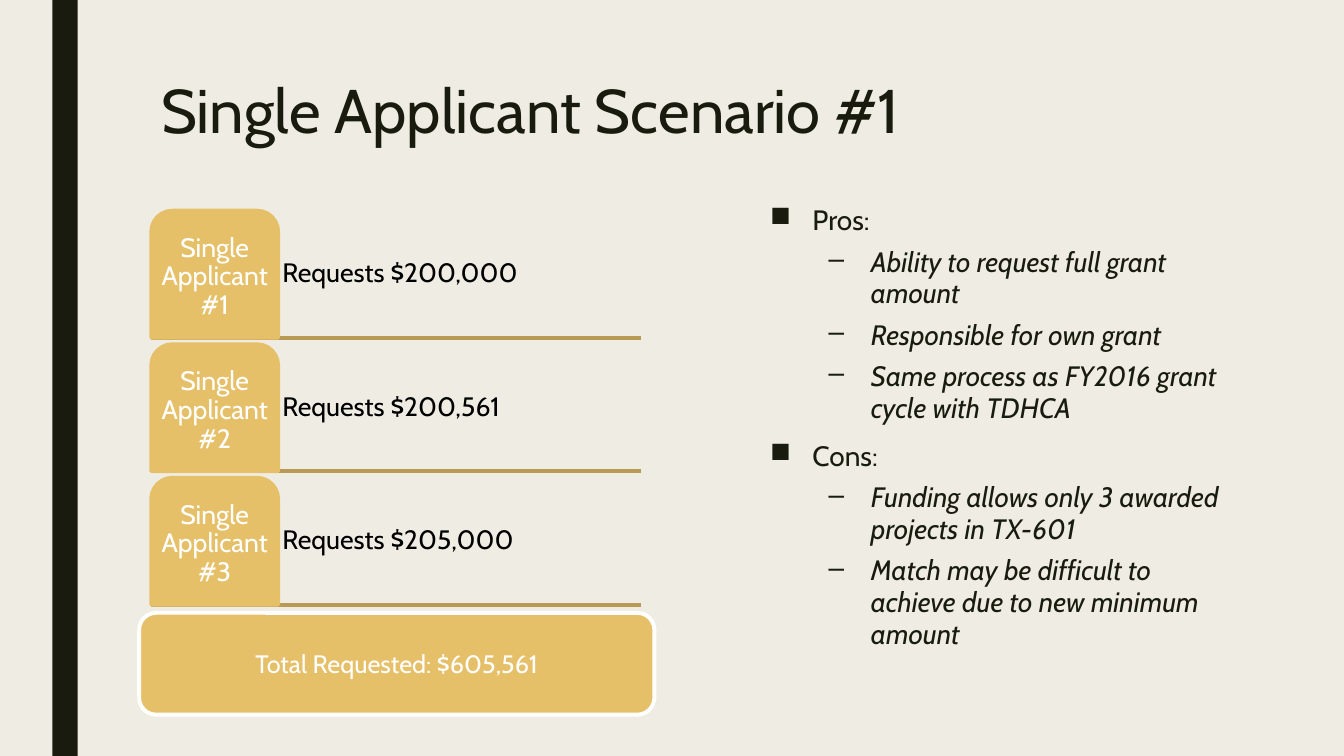
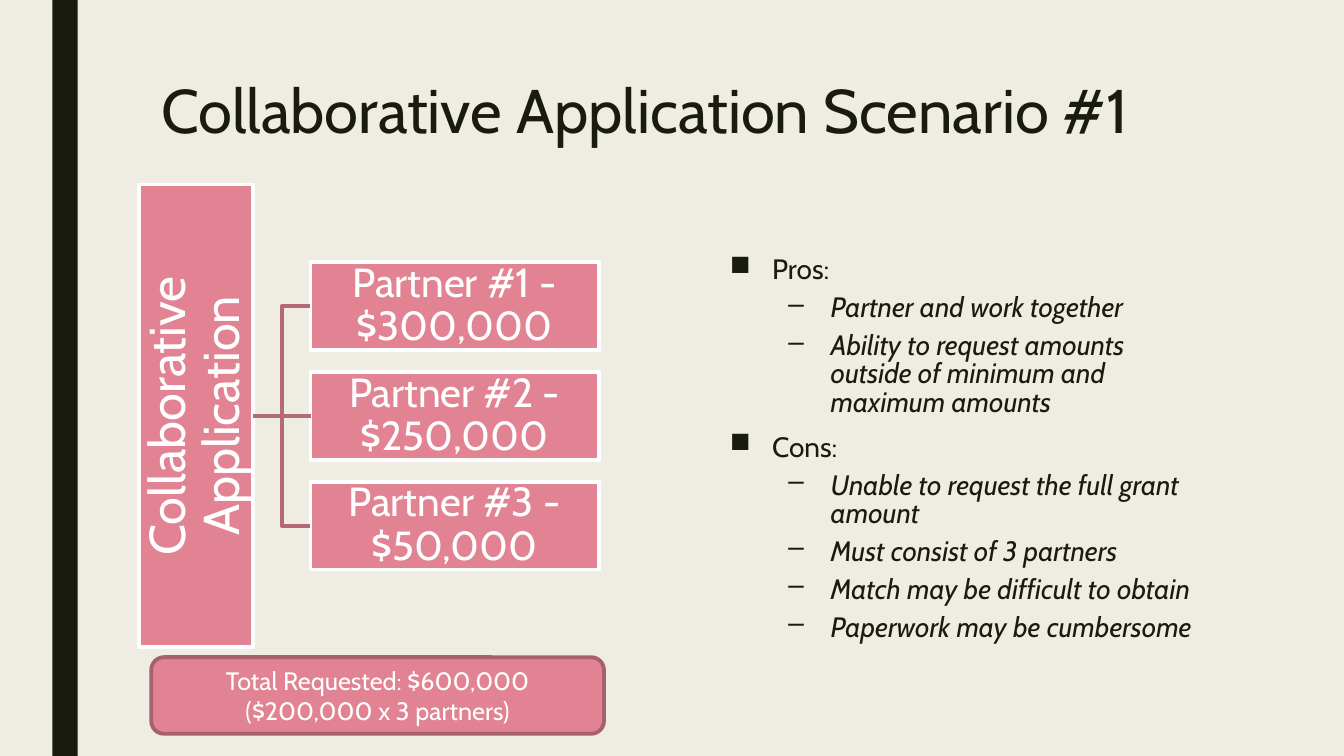
import lxml.etree
import pptx
import pptx.dml.color
import pptx.enum.shapes
import pptx.enum.text
import pptx.oxml.ns
import pptx.util

Inches = pptx.util.Inches
Pt = pptx.util.Pt
SHAPE = pptx.enum.shapes.MSO_SHAPE
CONNECTOR = pptx.enum.shapes.MSO_CONNECTOR
ANCHOR = pptx.enum.text.MSO_ANCHOR
ALIGN = pptx.enum.text.PP_ALIGN
qn = pptx.oxml.ns.qn

THEME = {
    "font": "Cabin",
    "colors": {
        name: pptx.dml.color.RGBColor.from_string(code)
        for name, code in {
            "paper": "EFEDE3", "ink": "191B0E", "white": "FFFFFF", "black": "000000",
            "gold": "E6C069", "gold_line": "B89A54",
            "rose": "E28394", "rose_line": "B56977", "rose_edge": "A7616D",
        }.items()
    },
    "sizes": {"title": Pt(44), "root": Pt(36), "partner": Pt(29), "body": Pt(20),
              "label": Pt(19), "total": Pt(18)},
    "line": Pt(2.75),
}
COLORS = THEME["colors"]


def add_box(page, at, lines=(), shape=None, fill=None, edge=None, size="body", color="white",
            inset=None, anchor=ANCHOR.MIDDLE, align=ALIGN.CENTER, spacing=0.9):
    """Add a preset shape, or a text box if no shape is given, with its text."""
    place = [Inches(value) for value in at]
    if shape is None:
        box = page.shapes.add_textbox(*place)
    else:
        box = page.shapes.add_shape(shape, *place)
        box.shadow.inherit = False
        box.fill.solid()
        box.fill.fore_color.rgb = COLORS[fill]
        if edge:
            box.line.color.rgb = COLORS[edge]
            box.line.width = THEME["line"]
        else:
            box.line.fill.background()
    frame = box.text_frame
    frame.word_wrap = True
    frame.vertical_anchor = anchor
    if inset is not None:
        for side in ("left", "top", "right", "bottom"):
            setattr(frame, "margin_" + side, Inches(inset))
    for index, line in enumerate(lines):
        para = frame.paragraphs[0] if index == 0 else frame.add_paragraph()
        para.alignment = align
        para.line_spacing = spacing
        span = para.add_run()
        span.text = line
        font_format = {"name": THEME["font"], "size": THEME["sizes"][size]}
        for name, value in font_format.items():
            setattr(span.font, name, value)
        span.font.color.rgb = COLORS[color]
    return box


def add_line(page, color, start=(0, 0), end=(0, 0), kind=CONNECTOR.STRAIGHT):
    """Add a connector without a shadow."""
    line = page.shapes.add_connector(kind, *[Inches(value) for value in (*start, *end)])
    line.line.color.rgb = COLORS[color]
    line.line.width = THEME["line"]
    lxml.etree.SubElement(line._element.spPr, qn("a:effectLst"))
    return line


deck = pptx.Presentation()
deck.slide_width, deck.slide_height = Inches(13.33), Inches(7.5)
deck.slide_master.background.fill.solid()
deck.slide_master.background.fill.fore_color.rgb = COLORS["paper"]

# Parts both slides share: side band, title, pros and cons
SLIDES = [
    {
        "title": "Single Applicant Scenario #1",
        "body_at": (7.54, 1.99, 4.86, 5.1),
        "spacing": 0.94,
        "points": {
            "Pros:": ["Ability to request full grant amount",
                      "Responsible for own grant",
                      "Same process as FY2016 grant cycle with TDHCA"],
            "Cons:": ["Funding allows only 3 awarded projects in TX-601",
                      "Match may be difficult to achieve due to new minimum amount"],
        },
    },
    {
        "title": "Collaborative Application Scenario #1",
        "body_at": (7.14, 2.5, 4.86, 4.78),
        "spacing": 0.84,
        "points": {
            "Pros:": ["Partner and work together",
                      "Ability to request amounts outside of minimum and maximum amounts"],
            "Cons:": ["Unable to request the full grant amount",
                      "Must consist of 3 partners",
                      "Match may be difficult to obtain",
                      "Paperwork may be cumbersome"],
        },
    },
]
LEVELS = {
    "heading": {"indent": 0.42, "before": Pt(10), "bullet": "■", "italic": False},
    "point": {"indent": 1, "before": Pt(5), "bullet": "–", "italic": True},
}

pages = []
for content in SLIDES:
    page = deck.slides.add_slide(deck.slide_layouts[6])
    pages.append(page)
    add_box(page, (0.52, 0, 0.25, 7.5), shape=SHAPE.RECTANGLE, fill="ink")
    add_box(page, (1.5, 0.75, 10.5, 0.85), [content["title"]], size="title", color="ink",
            anchor=ANCHOR.TOP, align=ALIGN.LEFT, spacing=0.89)
    lines = [line for heading, points in content["points"].items() for line in (heading, *points)]
    body = add_box(page, content["body_at"], lines, color="ink", anchor=ANCHOR.TOP,
                   align=ALIGN.LEFT, spacing=content["spacing"])
    for para in body.text_frame.paragraphs:
        is_heading = para.text in content["points"]
        level = LEVELS["heading" if is_heading else "point"]
        para.level = 0 if is_heading else 1
        para.space_before, para.space_after = level["before"], Pt(2)
        para.runs[0].font.italic = level["italic"]
        properties = para._p.get_or_add_pPr()
        properties.set("marL", str(Inches(level["indent"])))
        properties.set("indent", str(Inches(-0.42)))
        lxml.etree.SubElement(properties, qn("a:buChar")).set("char", level["bullet"])

single_page, collaborative_page = pages

# Slide 1: one row for each applicant, then the total
TAB = 1.26
for row, amount in enumerate(["$200,000", "$200,561", "$205,000"]):
    top = 2.09 + row * 1.325
    add_line(single_page, "gold_line", (1.5, top + TAB), (6.36, top + TAB))
    add_box(single_page, (1.5, top, TAB, TAB), [f"Single Applicant #{row + 1}"],
            SHAPE.ROUND_2_SAME_RECTANGLE, "gold", "gold", size="label", inset=0.04)
    add_box(single_page, (1.5 + TAB, top, 3.6, TAB), [f"Requests {amount}"],
            size="label", color="black", inset=0.04, align=ALIGN.LEFT)
add_box(single_page, (1.38, 6.08, 5.11, 1.01), ["Total Requested: $605,561"],
        SHAPE.ROUNDED_RECTANGLE, "gold", "white", size="total", spacing=1.0)

# Slide 2: the application branches to its partners, then the total
root = add_box(collaborative_page, (1.38, 1.83, 1.13, 4.59), ["Collaborative Application"],
               SHAPE.RECTANGLE, "rose", "white", size="root", inset=0.03)
root.text_frame._txBody.bodyPr.set("vert", "vert270")
for row, amount in enumerate(["$300,000", "$250,000", "$50,000"]):
    partner = add_box(collaborative_page, (3.08, 2.6 + row * 1.09, 2.86, 0.87),
                      [f"Partner #{row + 1} - {amount}"], SHAPE.RECTANGLE, "rose", "white",
                      size="partner", inset=0.02)
    kind = CONNECTOR.STRAIGHT if row == 1 else CONNECTOR.ELBOW
    branch = add_line(collaborative_page, "rose_line", kind=kind)
    branch.begin_connect(root, 3)
    branch.end_connect(partner, 1)
add_box(collaborative_page, (1.5, 6.52, 4.49, 0.76),
        ["Total Requested: $600,000", "($200,000 x 3 partners)"],
        SHAPE.ROUNDED_RECTANGLE, "rose", "rose_edge", size="total", spacing=1.0)

deck.save("out.pptx")
